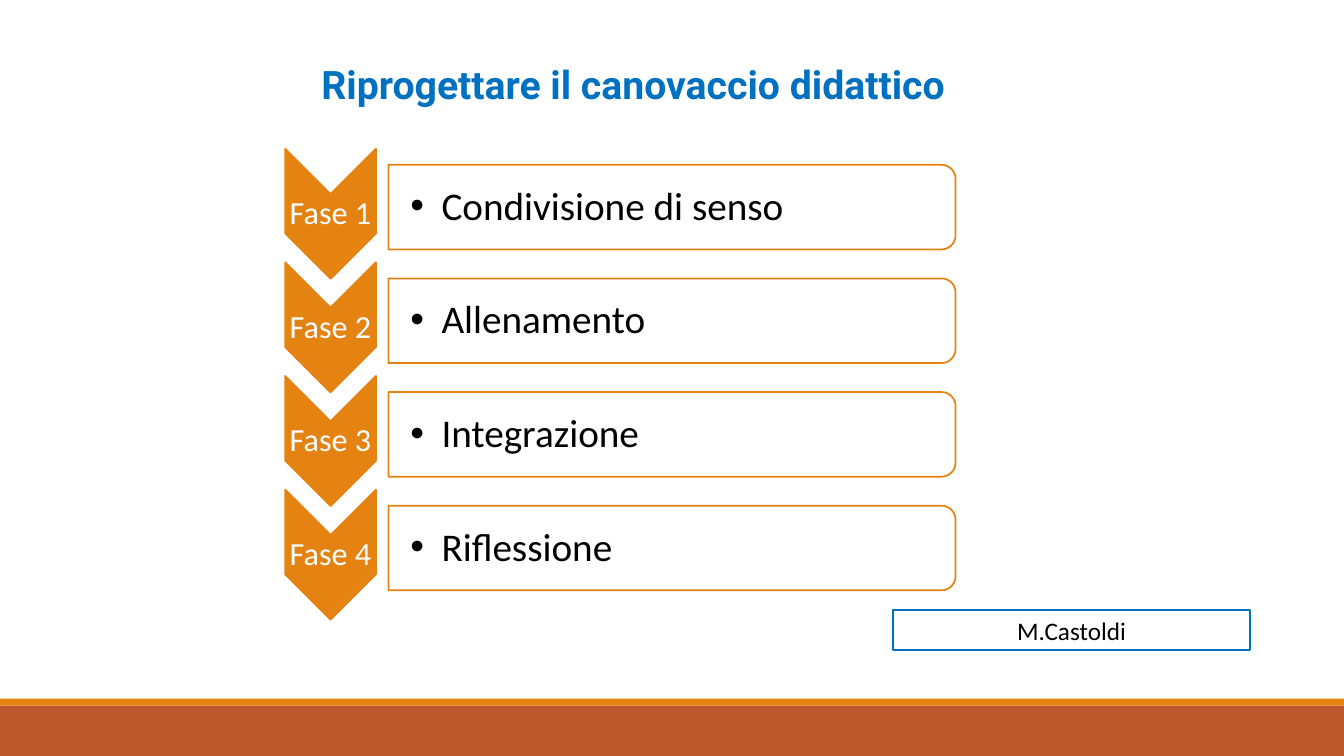
from lxml import etree
from pptx import Presentation
from pptx.dml.color import RGBColor
from pptx.enum.shapes import MSO_SHAPE
from pptx.enum.text import MSO_ANCHOR, PP_ALIGN
from pptx.oxml.ns import qn
from pptx.util import Inches, Pt

RECT = MSO_SHAPE.RECTANGLE
PANEL = MSO_SHAPE.ROUND_2_SAME_RECTANGLE
CHEVRON = MSO_SHAPE.CHEVRON
LEFT, CENTER = PP_ALIGN.LEFT, PP_ALIGN.CENTER
TOP, MIDDLE = MSO_ANCHOR.TOP, MSO_ANCHOR.MIDDLE

WHITE = RGBColor(0xFF, 0xFF, 0xFF)
BLACK = RGBColor(0x00, 0x00, 0x00)
BLUE = RGBColor(0x00, 0x70, 0xC0)
ORANGE = RGBColor(0xE4, 0x83, 0x12)
RUST = RGBColor(0xBD, 0x58, 0x2C)

WIDTH, HEIGHT = Inches(13.333), Inches(7.5)
PITCH = 15.03  # row step, percent of the slide height
PHASES = ["Condivisione di senso", "Allenamento", "Integrazione", "Riflessione"]


def place(x, y, w, h):
    """Turn percentages of the slide into lengths."""
    return [int(WIDTH * x / 100), int(HEIGHT * y / 100),
            int(WIDTH * w / 100), int(HEIGHT * h / 100)]


def add_box(slide, kind, area, fill=None, line=None, weight=1.25, turned=False):
    """Add a shape that covers area; a turned one is rotated by 90 degrees."""
    x, y, w, h = place(*area)
    if turned:
        x, y, w, h = x + (w - h) // 2, y + (h - w) // 2, h, w
    box = slide.shapes.add_shape(kind, x, y, w, h)
    box.shadow.inherit = False
    box.rotation = 90 if turned else 0
    if fill is None:
        box.fill.background()
    else:
        box.fill.solid()
        box.fill.fore_color.rgb = fill
    if line is None:
        box.line.fill.background()
    else:
        box.line.color.rgb = line
        box.line.width = Pt(weight)
    return box


def set_alpha(box, share):
    color = box.fill._xPr.find(qn("a:solidFill"))[0]
    etree.SubElement(color, qn("a:alpha"), val=str(share * 1000))


def add_bullet(para, indent):
    props = para._p.get_or_add_pPr()
    props.set("marL", str(Inches(indent)))
    props.set("indent", str(-Inches(indent)))
    etree.SubElement(props, qn("a:buFont"), typeface="Arial")
    etree.SubElement(props, qn("a:buChar"), char="•")


def write(box, text, size, color, font="Calibri", bold=False, align=CENTER,
          anchor=MIDDLE, spacing=0.9, insets=(0.1, 0.05, 0.1, 0.05), indent=0):
    frame = box.text_frame
    frame.word_wrap = True
    frame.vertical_anchor = anchor
    (frame.margin_left, frame.margin_top,
     frame.margin_right, frame.margin_bottom) = map(Inches, insets)
    para = frame.paragraphs[0]
    para.alignment = align
    para.line_spacing = spacing
    if indent:
        add_bullet(para, indent)
    run = para.add_run()
    run.text = text
    run.font.name = font
    run.font.size = Pt(size)
    run.font.bold = bold
    run.font.color.rgb = color


def add_phase(slide, row, text):
    drop = row * PITCH
    panel = add_box(slide, PANEL, (28.9, 21.8 + drop, 42.2, 11.2),
                    WHITE, ORANGE, turned=True)
    set_alpha(panel, 90)
    body = slide.shapes.add_textbox(*place(28.88, 22.4 + drop, 41.92, 10.13))
    write(body, text, 28, BLACK, align=LEFT,
          insets=(0.22, 0.02, 0.02, 0.02), indent=0.31)
    add_box(slide, CHEVRON, (21.22, 19.67 + drop, 6.75, 17.2),
            ORANGE, ORANGE, turned=True)
    label = slide.shapes.add_textbox(*place(21.22, 25.73 + drop, 6.75, 5.2))
    write(label, f"Fase {row + 1}", 23, WHITE, insets=(0.02,) * 4)


def main():
    deck = Presentation()
    deck.slide_width, deck.slide_height = WIDTH, HEIGHT
    slide = deck.slides.add_slide(deck.slide_layouts[6])

    add_box(slide, RECT, (0, 93.33, 100, 6.67), RUST)
    add_box(slide, RECT, (0, 92.4, 100, 0.93), ORANGE)

    title = add_box(slide, RECT, (13.43, 8, 67.35, 10.27), WHITE)
    write(title, "Riprogettare il canovaccio didattico", 28, BLUE,
          font="Roboto", bold=True, anchor=TOP)
    credit = add_box(slide, RECT, (66.45, 80.67, 26.55, 5.33),
                     line=BLUE, weight=1.5)
    write(credit, "M.Castoldi", 18, BLACK, anchor=TOP, spacing=1.0)

    for row, text in enumerate(PHASES):
        add_phase(slide, row, text)
    deck.save("out.pptx")


if __name__ == "__main__":
    main()
